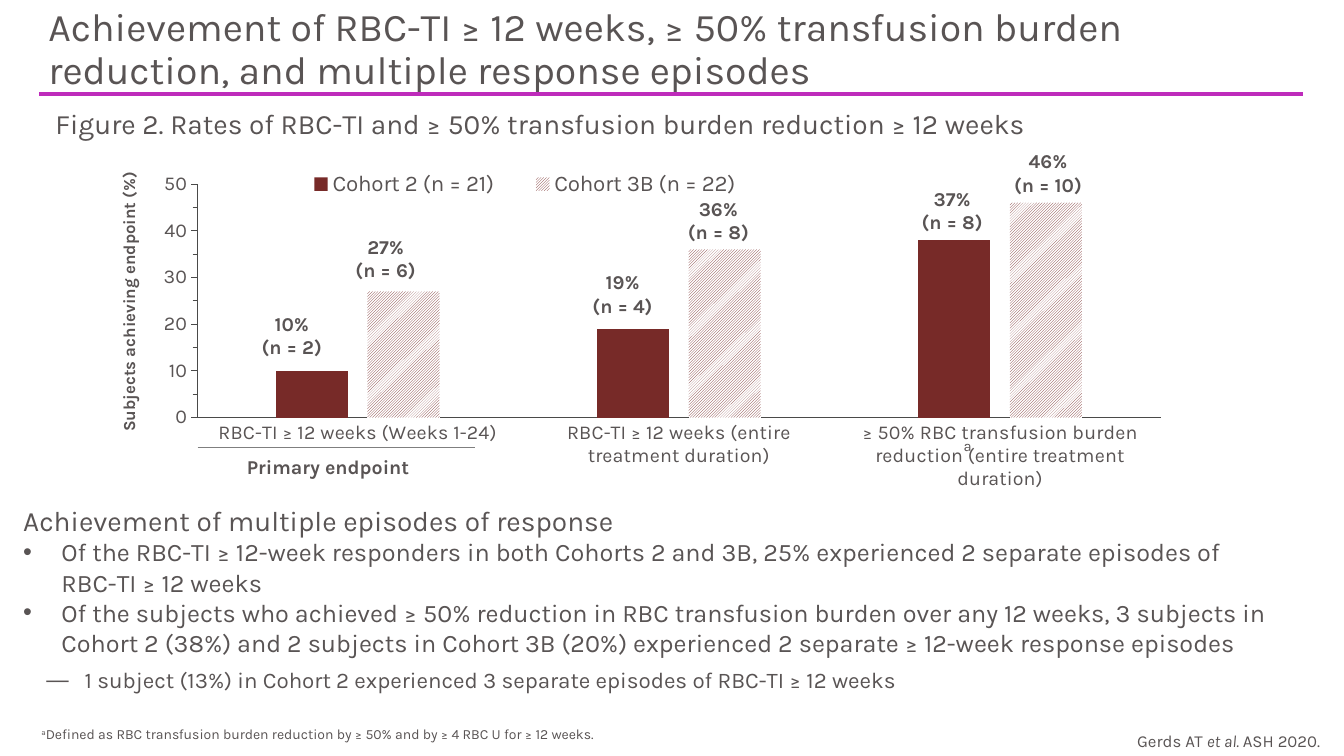
import copy

from lxml import etree
from pptx import Presentation
from pptx.chart.data import CategoryChartData
from pptx.dml.color import RGBColor
from pptx.enum.chart import XL_CHART_TYPE, XL_LEGEND_POSITION, XL_TICK_MARK
from pptx.enum.dml import MSO_PATTERN
from pptx.enum.shapes import MSO_CONNECTOR
from pptx.enum.text import MSO_ANCHOR, MSO_AUTO_SIZE, PP_ALIGN
from pptx.oxml import parse_xml
from pptx.oxml.ns import nsdecls, qn
from pptx.util import Pt

COLUMNS = XL_CHART_TYPE.COLUMN_CLUSTERED
LEGEND_BOTTOM = XL_LEGEND_POSITION.BOTTOM
TICK_NONE, TICK_OUT = XL_TICK_MARK.NONE, XL_TICK_MARK.OUTSIDE
HATCH = MSO_PATTERN.LIGHT_UPWARD_DIAGONAL
STRAIGHT = MSO_CONNECTOR.STRAIGHT
TOP, BOTTOM = MSO_ANCHOR.TOP, MSO_ANCHOR.BOTTOM
LEFT, CENTER = PP_ALIGN.LEFT, PP_ALIGN.CENTER
NO_FIT = MSO_AUTO_SIZE.NONE

PX = 9144  # 100 px to the inch
THEME = {
    "font": "Karla",
    "text": RGBColor(0x59, 0x54, 0x54),
    "accent": RGBColor(0xBE, 0x2B, 0xBB),
    "bar": RGBColor(0x77, 0x2A, 0x28),
    "white": RGBColor(0xFF, 0xFF, 0xFF),
    "axis": RGBColor(0x4A, 0x4A, 0x49),
    "bracket": RGBColor(0x7F, 0x7F, 0x7F),
    "title": 28, "heading": 20, "bullet": 18, "dash": 16, "legend": 16,
    "label": 14, "axis_title": 12, "source": 12, "note": 10, "mark": 10.5,
}


def style(font, size, **extra):
    font.color.rgb = THEME["text"]
    values = {"name": THEME["font"], "size": Pt(THEME[size]), "bold": False, **extra}
    for name, value in values.items():
        setattr(font, name, value)


def write(shape, box, paragraphs, wrap=True, anchor=TOP, insets=(10, 5, 10, 5)):
    """Place a text shape; each paragraph is (text, size, paragraph format, font format)."""
    shape.left, shape.top, shape.width, shape.height = (v * PX for v in box)
    frame = shape.text_frame
    frame.auto_size, frame.word_wrap, frame.vertical_anchor = NO_FIT, wrap, anchor
    for side, inset in zip(("left", "top", "right", "bottom"), insets):
        setattr(frame, f"margin_{side}", inset * PX)
    for i, (text, size, layout, font) in enumerate(paragraphs):
        paragraph = frame.paragraphs[0] if i == 0 else frame.add_paragraph()
        paragraph.text = text
        values = {"alignment": LEFT, "space_before": Pt(0), "line_spacing": 1.0, **layout}
        for name, value in values.items():
            setattr(paragraph, name, value)
        for run in paragraph.runs:
            style(run.font, size, **font)
        for line_break in paragraph._p.findall(qn("a:br")):
            line_break.append(copy.deepcopy(paragraph.runs[0]._r.rPr))
    return frame


prs = Presentation()
prs.slide_width, prs.slide_height = 1333 * PX, 750 * PX
slide = prs.slides.add_slide(prs.slide_layouts[1])
shapes = slide.shapes
TIGHT = {"line_spacing": 0.9}

# Title and caption
write(shapes.title, (41, 25, 1250, 74),
      [("Achievement of RBC-TI ≥ 12 weeks, ≥ 50% transfusion burden reduction, "
        "and multiple response episodes", "title", TIGHT, {})],
      anchor=BOTTOM, insets=(7, 5, 5, 7))
write(shapes.add_textbox(0, 0, 0, 0), (41, 103, 1250, 54),
      [("Figure 2. Rates of RBC-TI and ≥ 50% transfusion burden reduction ≥ 12 weeks",
        "heading", TIGHT, {})], insets=(14, 6, 10, 5))

# Response rate chart
rates = CategoryChartData()
rates.categories = [
    "RBC-TI ≥ 12 weeks (Weeks 1-24)",
    "RBC-TI ≥ 12 weeks (entire treatment duration)",
    "≥ 50% RBC transfusion burden reduction (entire treatment duration)",
]
rates.add_series("Cohort 2 (n = 21)", (10, 19, 38))
rates.add_series("Cohort 3B (n = 22)", (27, 36, 46))
chart = shapes.add_chart(COLUMNS, 94 * PX, 164 * PX, 1080 * PX, 372 * PX, rates).chart
chart.has_title = False
style(chart.font, "note")
plot = chart.plots[0]
plot.vary_by_categories, plot.gap_width, plot.overlap = False, 219, -27
for series in plot.series:
    series.format.line.fill.background()
cohort_2, cohort_3b = (series.format.fill for series in plot.series)
cohort_2.solid()
cohort_2.fore_color.rgb = THEME["bar"]
cohort_3b.patterned()
cohort_3b.pattern = HATCH
cohort_3b.fore_color.rgb, cohort_3b.back_color.rgb = THEME["bar"], THEME["white"]

# Axes and legend
endpoints, percent = chart.category_axis, chart.value_axis
for axis, tick in ((endpoints, TICK_NONE), (percent, TICK_OUT)):
    axis.major_tick_mark = axis.minor_tick_mark = tick
    axis.has_major_gridlines = False
    axis.format.line.color.rgb = THEME["axis"]
    axis.format.line.width = Pt(0.75)
    style(axis.tick_labels.font, "label")
percent_scale = {"minimum_scale": 0, "maximum_scale": 50, "major_unit": 10, "minor_unit": 5}
for name, value in percent_scale.items():
    setattr(percent, name, value)
percent.axis_title.text_frame.text = "Subjects achieving endpoint (%)"
style(percent.axis_title.text_frame.paragraphs[0].runs[0].font, "axis_title", bold=True)
chart.has_legend = True
chart.legend.position, chart.legend.include_in_layout = LEGEND_BOTTOM, False
style(chart.legend.font, "legend")

# Fixed places inside the chart, as shares of its size
places = (
    (chart._chartSpace.chart.plotArea, "inner", {"x": 0.094, "y": 0.05, "w": 0.885, "h": 0.623}),
    (chart.legend._element, None, {"x": 0.17, "y": 0.01, "w": 0.45, "h": 0.08}),
    (percent.axis_title._element, None, {"x": 0.018, "y": 0.01}),
)
for part, target, place in places:
    for old in part.findall(qn("c:layout")):
        part.remove(old)
    layout = parse_xml(f"<c:layout {nsdecls('c')}><c:manualLayout/></c:layout>")
    entries = [("layoutTarget", target)] if target else []
    entries += [(f"{side}Mode", "edge") for side in "xy"] + list(place.items())
    for tag, value in entries:
        etree.SubElement(layout[0], qn(f"c:{tag}")).set("val", str(value))
    before = [child for child in part if child.tag in (qn("c:legendPos"), qn("c:tx"))]
    part.insert(len(before), layout)

# Bar labels
bar_labels = (
    (256, 304, "10%\v(n = 2)"), (349, 228, "27%\v(n = 6)"),
    (584, 263, "19%\v(n = 4)"), (679, 190, "36%\v(n = 8)"),
    (911, 180, "37%\v(n = 8)"), (1006, 143, "46%\v(n = 10)"),
)
for left, top, label in bar_labels:
    write(shapes.add_textbox(0, 0, 0, 0), (left, top, 67, 29),
          [(label, "label", {"alignment": CENTER}, {"bold": True})], wrap=False)

# Marks under the chart
write(shapes.add_textbox(0, 0, 0, 0), (235, 446, 197, 32),
      [("Primary endpoint", "label", {}, {"bold": True})], wrap=False)
write(shapes.add_textbox(0, 0, 0, 0), (946, 428, 27, 24),
      [("a", "mark", {}, {})], wrap=False)

# Title rule and primary endpoint bracket
for start, end, y, color, weight in ((39, 1292, 93, "accent", 2.75),
                                     (196, 471, 444, "bracket", 0.75)):
    rule = shapes.add_connector(STRAIGHT, start * PX, y * PX, end * PX, y * PX)
    rule.line.color.rgb, rule.line.width = THEME[color], Pt(weight)
    etree.SubElement(rule._element.spPr, qn("a:effectLst"))

# Response episodes list
episodes = write(slide.placeholders[1], (13, 494, 1278, 200), [
    ("Achievement of multiple episodes of response", "heading", {}, {}),
    ("Of the RBC-TI ≥ 12-week responders in both Cohorts 2 and 3B, 25% experienced "
     "2 separate episodes of \vRBC-TI ≥ 12 weeks", "bullet", {}, {}),
    ("Of the subjects who achieved ≥ 50% reduction in RBC transfusion burden over any "
     "12 weeks, 3 subjects in Cohort 2 (38%) and 2 subjects in Cohort 3B (20%) "
     "experienced 2 separate ≥ 12-week response episodes", "bullet", {}, {}),
    ("1 subject (13%) in Cohort 2 experienced 3 separate episodes of RBC-TI ≥ 12 weeks",
     "dash", {"level": 1, "space_before": Pt(6)}, {}),
])
bullets = ((0, 0, None), (38, -38, "•"), (38, -38, "•"), (61, -38, "—"))
for paragraph, (margin, indent, mark) in zip(episodes.paragraphs, bullets):
    properties = paragraph._p.get_or_add_pPr()
    properties.set("marL", str(margin * PX))
    properties.set("indent", str(indent * PX))
    if mark:
        etree.SubElement(properties, qn("a:buFont")).set("typeface", "Arial")
        etree.SubElement(properties, qn("a:buChar")).set("char", mark)
    else:
        etree.SubElement(properties, qn("a:buNone"))

# Footnote and source
footnote = write(shapes.add_textbox(0, 0, 0, 0), (41, 722, 1189, 15),
                 [("a", "note", TIGHT, {})], anchor=BOTTOM, insets=(0, 0, 0, 0)).paragraphs[0]
footnote.runs[0]._r.get_or_add_rPr().set("baseline", "30000")
source = write(shapes.add_textbox(0, 0, 0, 0), (1118, 720, 216, 30),
               [("Gerds AT ", "source", {}, {})], wrap=False).paragraphs[0]
endings = (
    (footnote, "Defined as RBC transfusion burden reduction by ≥ 50% and by ≥ 4 RBC U "
               "for ≥ 12 weeks.", "note", False),
    (source, "et al. ", "source", True),
    (source, "ASH 2020.", "source", False),
)
for paragraph, text, size, italic in endings:
    run = paragraph.add_run()
    run.text = text
    style(run.font, size, italic=italic)

prs.save("out.pptx")
